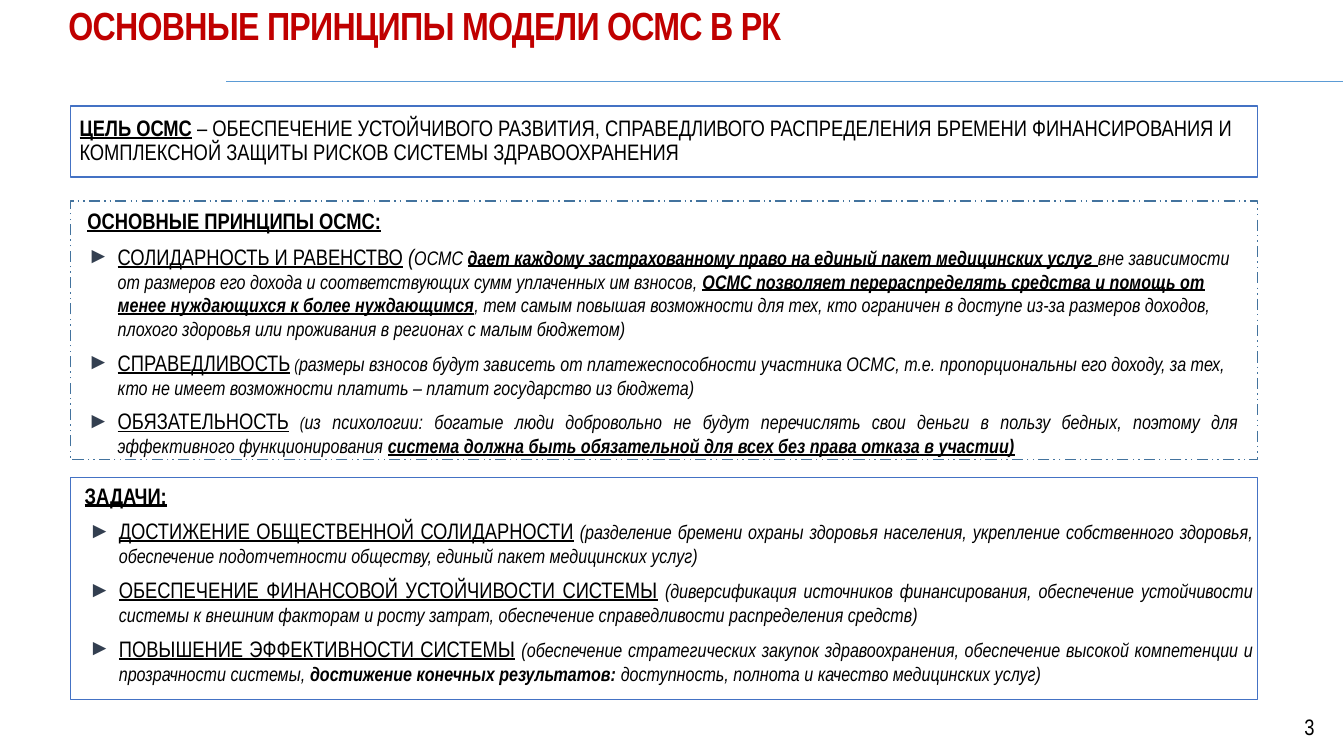
"""Builds the slide on the goal, principles and tasks of the OSMS model."""
from lxml.etree import SubElement
from pptx import Presentation
from pptx.dml.color import RGBColor
from pptx.enum.dml import MSO_LINE
from pptx.enum.shapes import MSO_CONNECTOR, MSO_SHAPE
from pptx.enum.text import MSO_ANCHOR, PP_ALIGN
from pptx.oxml.ns import qn
from pptx.util import Pt

RED = RGBColor(0xC0, 0x00, 0x00)
BLACK = RGBColor(0x00, 0x00, 0x00)
BLUE = RGBColor(0x44, 0x72, 0xC4)
STEEL = RGBColor(0x43, 0x73, 0x9E)
SKY = RGBColor(0x5B, 0x9B, 0xD5)
SLATE = RGBColor(0x33, 0x3F, 0x50)

LEFT, WIDE = 50.4, 848
INSET = (6.5, 3, 3, 3)

GOAL = [
    ("ЦЕЛЬ ОСМС", 16, "bu"), (" ", 16, "b"),
    ("– ОБЕСПЕЧЕНИЕ УСТОЙЧИВОГО РАЗВИТИЯ, СПРАВЕДЛИВОГО РАСПРЕДЕЛЕНИЯ БРЕМЕНИ "
     "ФИНАНСИРОВАНИЯ И КОМПЛЕКСНОЙ ЗАЩИТЫ РИСКОВ СИСТЕМЫ ЗДРАВООХРАНЕНИЯ", 16, ""),
]
EQUAL = [
    ("СОЛИДАРНОСТЬ И РАВЕНСТВО", 16, "u"), (" ", 16, ""), ("(", 16, "i"),
    ("ОСМС ", 14, "i"),
    ("дает каждому застрахованному право на единый пакет медицинских услуг ", 14, "biu"),
    ("вне зависимости от размеров его дохода и соответствующих сумм "
     "уплаченных им взносов, ", 14, "i"),
    ("ОСМС позволяет перераспределять средства и помощь от менее нуждающихся "
     "к более нуждающимся", 14, "biu"),
    (", тем самым повышая возможности для тех, кто ограничен в доступе из-за размеров "
     "доходов, плохого здоровья или проживания в регионах с малым бюджетом)", 14, "i"),
]
FAIR = [
    ("СПРАВЕДЛИВОСТЬ", 16, "u"), (" ", 12, ""), ("(", 12, "i"),
    ("размеры взносов будут зависеть от платежеспособности участника ОСМС, т.е. "
     "пропорциональны его доходу, за тех, кто не имеет возможности платить – "
     "платит государство из бюджета)", 14, "i"),
]
DUTY = [
    ("ОБЯЗАТЕЛЬНОСТЬ", 16, "u"), (" ", 12, ""), ("(", 12, "i"),
    ("из психологии: богатые люди добровольно не будут перечислять свои деньги в пользу "
     "бедных, поэтому для эффективного функционирования ", 14, "i"),
    ("система должна быть обязательной для всех без права отказа в участии)", 14, "biu"),
]
TASKS = [
    [("ДОСТИЖЕНИЕ ОБЩЕСТВЕННОЙ СОЛИДАРНОСТИ", 16, "u"), (" ", 14, ""),
     ("(разделение бремени охраны здоровья населения, укрепление собственного здоровья, "
      "обеспечение подотчетности обществу, единый пакет медицинских услуг)", 14, "i")],
    [("ОБЕСПЕЧЕНИЕ ФИНАНСОВОЙ УСТОЙЧИВОСТИ СИСТЕМЫ", 16, "u"), (" ", 16, ""),
     ("(диверсификация источников финансирования, обеспечение устойчивости системы "
      "к внешним факторам и росту затрат, обеспечение справедливости "
      "распределения средств)", 14, "i")],
    [("ПОВЫШЕНИЕ ЭФФЕКТИВНОСТИ СИСТЕМЫ", 16, "u"), (" ", 16, ""),
     ("(обеспечение стратегических закупок здравоохранения, обеспечение высокой "
      "компетенции и прозрачности системы, ", 14, "i"),
     ("достижение конечных результатов: ", 14, "bi"),
     ("доступность, полнота и качество медицинских услуг)", 14, "i")],
]


class Page:
    def __init__(self, slide, font):
        self.slide, self.font = slide, font

    def box(self, left, top, width, height, color, dash=None):
        shape = self.slide.shapes.add_shape(
            MSO_SHAPE.RECTANGLE, Pt(left), Pt(top), Pt(width), Pt(height))
        shape.shadow.inherit = False
        shape.fill.background()
        shape.line.color.rgb = color
        shape.line.width = Pt(1)
        if dash:
            shape.line.dash_style = dash
        return shape

    def label(self, left, top, width, height):
        return self.slide.shapes.add_textbox(Pt(left), Pt(top), Pt(width), Pt(height))

    def frame(self, shape, anchor=MSO_ANCHOR.TOP, inset=(7.2, 3.6, 7.2, 3.6)):
        frame = shape.text_frame
        frame.word_wrap = True
        frame.vertical_anchor = anchor
        (frame.margin_left, frame.margin_top,
         frame.margin_right, frame.margin_bottom) = map(Pt, inset)
        return frame

    def para(self, frame, runs, align=PP_ALIGN.LEFT, after=0, color=BLACK):
        para = frame.paragraphs[0]
        if para.runs:
            para = frame.add_paragraph()
        para.alignment = align
        para.space_after = Pt(after)
        for text, size, marks in runs:
            run = para.add_run()
            run.text = text
            font = run.font
            font.name, font.size = self.font, Pt(size)
            font.color.rgb = color
            font.bold, font.italic, font.underline = (mark in marks for mark in "biu")
        return para

    def point(self, frame, runs, indent, align=PP_ALIGN.LEFT):
        props = self.para(frame, runs, align, 6)._p.get_or_add_pPr()
        props.set("marL", str(Pt(indent)))
        props.set("indent", str(Pt(-21.6)))
        tint = SubElement(props, qn("a:buClr"))
        SubElement(tint, qn("a:srgbClr"), val=str(SLATE))
        SubElement(props, qn("a:buFont"), typeface="Arial")
        SubElement(props, qn("a:buChar"), char="►")

    def rule(self, left, right, top):
        line = self.slide.shapes.add_connector(
            MSO_CONNECTOR.STRAIGHT, Pt(left), Pt(top), Pt(right), Pt(top))
        line.line.color.rgb = SKY
        line.line.width = Pt(0.5)
        SubElement(line._element.spPr, qn("a:effectLst"))


def main():
    deck = Presentation()
    deck.slide_width, deck.slide_height = Pt(960), Pt(540)
    page = Page(deck.slides.add_slide(deck.slide_layouts[6]), "Arial Narrow")

    title = page.frame(page.label(41.8, -1.5, 828, 39), MSO_ANCHOR.MIDDLE)
    head = page.para(title, [("ОСНОВНЫЕ ПРИНЦИПЫ МОДЕЛИ ОСМС В РК", 28, "b")], color=RED)
    for run in head.runs:
        run.font._element.set("spc", "-50")
    number = page.frame(page.label(854, 504.7, 92, 28.8), MSO_ANCHOR.MIDDLE)
    page.para(number, [("3", 16, "")], PP_ALIGN.RIGHT)
    page.rule(161.5, 959, 58.3)

    goal = page.frame(page.box(LEFT, 75.6, WIDE, 51, BLUE), MSO_ANCHOR.MIDDLE, INSET)
    page.para(goal, GOAL).line_spacing = 0.9

    tasks = page.frame(page.box(LEFT, 341.3, WIDE, 158.4, BLUE), inset=INSET)
    page.para(tasks, [(" ", 16, "b"), ("ЗАДАЧИ:", 16, "bu")], PP_ALIGN.JUSTIFY, 6)
    for task in TASKS:
        page.point(tasks, task, 28, PP_ALIGN.JUSTIFY)

    page.box(LEFT, 143.5, WIDE, 185, STEEL, MSO_LINE.DASH_DOT_DOT)
    rules = page.frame(page.label(55.4, 144.7, 836.6, 184.3))
    page.para(rules, [("ОСНОВНЫЕ ПРИНЦИПЫ ОСМС:", 16, "bu")], after=6)
    for runs in (EQUAL, FAIR):
        page.point(rules, runs, 21.6)
    page.point(rules, DUTY, 21.6, PP_ALIGN.JUSTIFY)

    deck.save("out.pptx")


if __name__ == "__main__":
    main()
